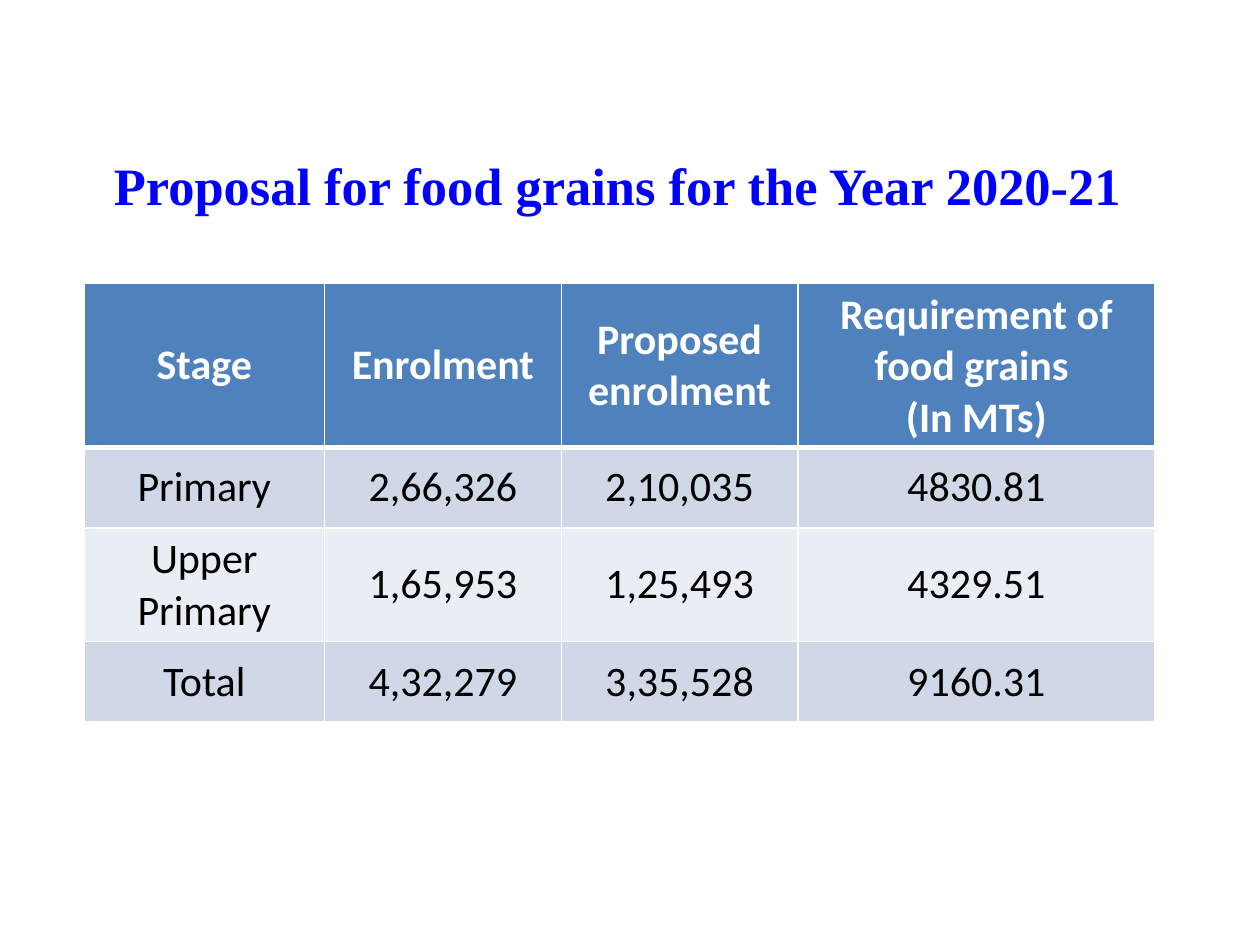
from lxml.etree import SubElement
from pptx import Presentation
from pptx.dml.color import RGBColor
from pptx.enum.text import MSO_ANCHOR, PP_ALIGN
from pptx.oxml.ns import qn
from pptx.util import Pt

COLORS = {"title": "0000FF", "head": "4F81BD", "odd": "D0D8E8",
          "even": "E9EDF4", "white": "FFFFFF", "black": "000000"}
ROWS = [
    ["Stage", "Enrolment", "Proposed enrolment",
     "Requirement of food grains \n(In MTs)"],
    ["Primary", "2,66,326", "2,10,035", "4830.81"],
    ["Upper Primary", "1,65,953", "1,25,493", "4329.51"],
    ["Total", "4,32,279", "3,35,528", "9160.31"],
]
WIDTHS = [137.5, 135.25, 135.25, 204]
HEIGHTS = [93, 46, 65, 46]


def color(name):
    return RGBColor.from_string(COLORS[name])


def write(frame, text, size=24, font="Calibri", ink="black", bold=False):
    frame.word_wrap = True
    frame.text = text
    for para in frame.paragraphs:
        para.alignment = PP_ALIGN.CENTER
        for run in para.runs:
            run.font.size = Pt(size)
            run.font.name = font
            run.font.bold = bold
            run.font.color.rgb = color(ink)


def edge(cell, **widths):
    """Draw white cell borders; call before the fill, which must follow them."""
    props = cell._tc.get_or_add_tcPr()
    for side, width in widths.items():
        line = SubElement(props, qn(f"a:ln{side}"), w=str(Pt(width)))
        fill = SubElement(line, qn("a:solidFill"))
        SubElement(fill, qn("a:srgbClr"), val=COLORS["white"])


class Deck:
    def __init__(self, width, height):
        self.show = Presentation()
        self.show.slide_width = Pt(width)
        self.show.slide_height = Pt(height)
        self.slide = self.show.slides.add_slide(self.show.slide_layouts[6])

    def title(self, text, left, top, width, height):
        box = self.slide.shapes.add_textbox(
            Pt(left), Pt(top), Pt(width), Pt(height))
        write(box.text_frame, text, size=30, font="Times New Roman",
              ink="title", bold=True)

    def table(self, rows, left, top, widths, heights):
        grid = self.slide.shapes.add_table(
            len(rows), len(widths), Pt(left), Pt(top),
            Pt(sum(widths)), Pt(sum(heights))).table
        for col, width in zip(grid.columns, widths):
            col.width = Pt(width)
        for r, (row, height) in enumerate(zip(rows, heights)):
            grid.rows[r].height = Pt(height)
            for c, text in enumerate(row):
                self.cell(grid.cell(r, c), text, r)

    def cell(self, cell, text, row):
        head = row == 0
        edge(cell, L=1, R=1, T=3 if row == 1 else 1, B=3 if head else 1)
        cell.fill.solid()
        cell.fill.fore_color.rgb = color(
            "head" if head else "odd" if row % 2 else "even")
        cell.vertical_anchor = MSO_ANCHOR.MIDDLE
        write(cell.text_frame, text, ink="white" if head else "black",
              bold=head)


def main():
    deck = Deck(720, 540)
    deck.title("Proposal for food grains for the Year 2020-21",
               20, 84, 666, 44)
    deck.table(ROWS, 48, 162, WIDTHS, HEIGHTS)
    deck.show.save("out.pptx")


if __name__ == "__main__":
    main()
